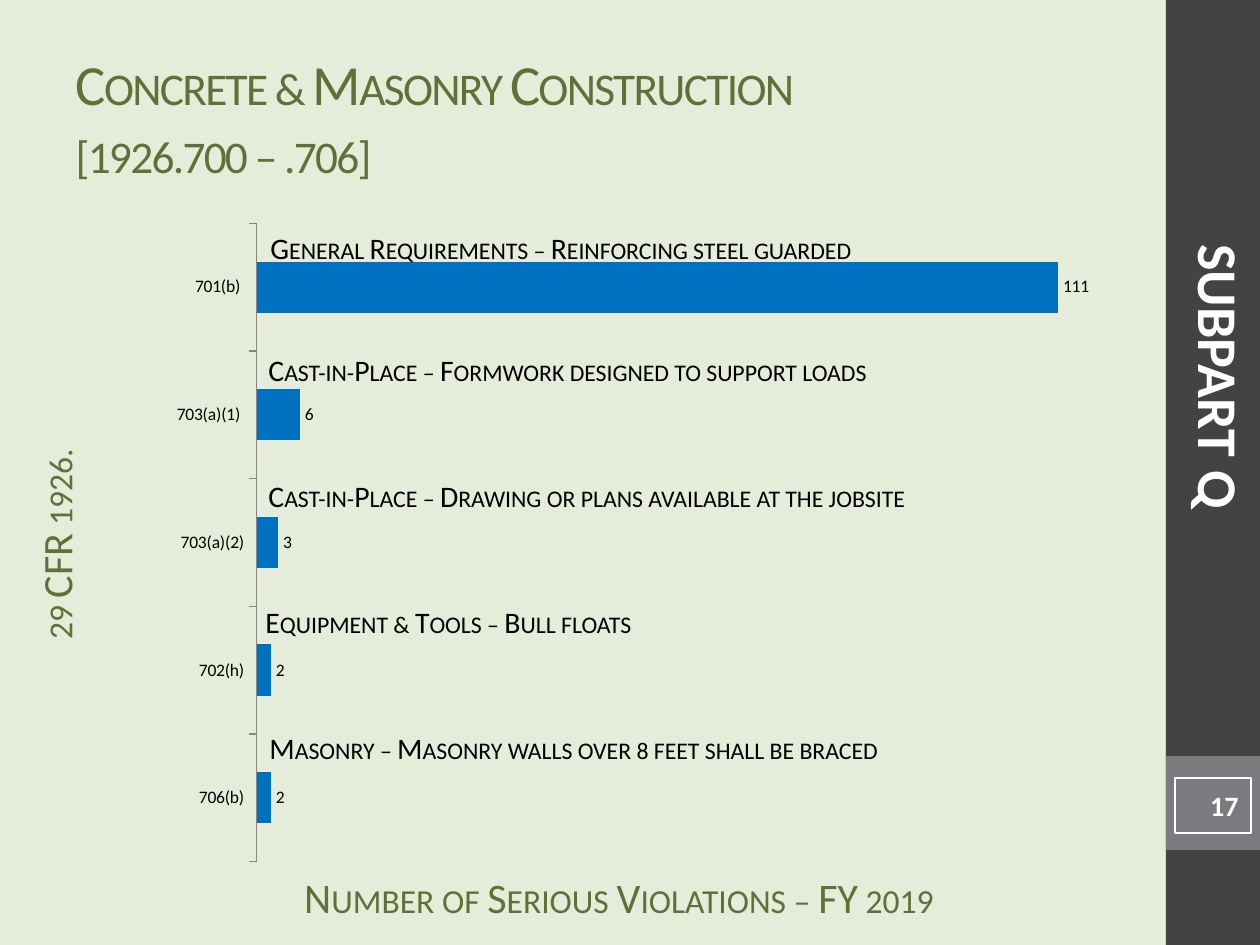
from pptx import Presentation
from pptx.chart.data import CategoryChartData
from pptx.dml.color import RGBColor
from pptx.enum.chart import XL_CHART_TYPE, XL_LABEL_POSITION, XL_TICK_MARK
from pptx.enum.shapes import MSO_SHAPE
from pptx.enum.text import MSO_ANCHOR, MSO_AUTO_SIZE, PP_ALIGN
from pptx.oxml import parse_xml
from pptx.oxml.ns import nsdecls, qn
from pptx.util import Emu, Pt

FACE = "Calibri"
GREEN, BLACK, WHITE, BLUE = "5D7238", "000000", "FFFFFF", "0070C0"

# Bars from bottom to top
BARS = [("706(b)", 2), ("702(h)", 2), ("703(a)(2)", 3),
        ("703(a)(1) ", 6), ("701(b) ", 111)]

# Captions above the bars: left, top, width, text
NOTES = [
    (258, 224, 624, "General Requirements – Reinforcing steel guarded"),
    (256, 346, 648, "Cast-in-Place – Formwork designed to support loads"),
    (256, 472, 689, "Cast-in-Place – Drawing or plans available at the jobsite"),
    (253, 598, 408, "Equipment & Tools – Bull floats"),
    (257, 724, 709, "Masonry – Masonry walls over 8 feet shall be braced"),
]


def px(num):
    return Emu(round(num * 914400 / 126))


def area(box):
    return [px(num) for num in box]


def color(code):
    return RGBColor.from_string(code)


def style(font, size, code, bold=False):
    font.name = FACE
    font.size = Pt(size)
    font.bold = bold
    font.color.rgb = color(code)


def write(frame, text, size, code, align=PP_ALIGN.LEFT, bold=False, small=False):
    frame.word_wrap = True
    par = frame.paragraphs[0]
    par.text = text
    par.alignment = align
    style(par.font, size, code, bold)
    if small:
        par._p.pPr.find(qn("a:defRPr")).set("cap", "small")
    return par


def label(slide, box, text, size, code, turn=0, top=6, **look):
    shape = slide.shapes.add_textbox(*area(box))
    shape.rotation = turn
    shape.text_frame.margin_top = px(top)
    write(shape.text_frame, text, size, code, **look)


def block(slide, box, fill=None, line=None):
    shape = slide.shapes.add_shape(MSO_SHAPE.RECTANGLE, *area(box))
    shape.shadow.inherit = False
    if fill:
        shape.fill.solid()
        shape.fill.fore_color.rgb = color(fill)
    else:
        shape.fill.background()
    if line:
        shape.line.color.rgb = color(line)
        shape.line.width = Pt(1.5)
    else:
        shape.line.fill.background()
    return shape


def head(slide, box, text):
    title = slide.shapes.title
    title.left, title.top, title.width, title.height = area(box)
    frame = title.text_frame
    frame.auto_size = MSO_AUTO_SIZE.NONE
    frame.vertical_anchor = MSO_ANCHOR.MIDDLE
    par = write(frame, text, 32.4, GREEN, small=True)
    par._p.pPr.find(qn("a:defRPr")).set("spc", "-100")


def place(chart, x, y, w, h):
    """Fix the inner plot area, as shares of the chart's frame."""
    plot = chart._chartSpace.chart.plotArea
    old = plot.find(qn("c:layout"))
    if old is not None:
        plot.remove(old)
    parts = "".join(f'<c:{key} val="{val}"/>' for key, val in
                    zip(("x", "y", "w", "h"), (x, y, w, h)))
    plot.insert(0, parse_xml(
        f'<c:layout {nsdecls("c")}><c:manualLayout><c:layoutTarget val="inner"/>'
        f'<c:xMode val="edge"/><c:yMode val="edge"/>{parts}'
        '</c:manualLayout></c:layout>'))


def graph(slide, box):
    data = CategoryChartData()
    data.categories = [name for name, _ in BARS]
    data.add_series("Series 1", [num for _, num in BARS])
    chart = slide.shapes.add_chart(
        XL_CHART_TYPE.BAR_CLUSTERED, *area(box), data).chart
    chart.has_legend = False
    chart.has_title = False
    style(chart.font, 10, BLACK)
    place(chart, 0.10, 0.02, 0.88, 0.96)

    # Axes
    side = chart.category_axis
    side.major_tick_mark = XL_TICK_MARK.OUTSIDE
    side.has_major_gridlines = False
    side.format.line.color.rgb = color("868686")
    base = chart.value_axis
    base.has_major_gridlines = False
    base.minimum_scale, base.maximum_scale = 0, 120
    base.visible = False

    # Bars and their values
    plot = chart.plots[0]
    plot.gap_width = 150
    plot.vary_by_categories = False
    fill = plot.series[0].format.fill
    fill.solid()
    fill.fore_color.rgb = color(BLUE)
    plot.has_data_labels = True
    tags = plot.data_labels
    tags.show_value = True
    tags.position = XL_LABEL_POSITION.OUTSIDE_END
    style(tags.font, 10, BLACK)


def main():
    deck = Presentation()
    deck.slide_width, deck.slide_height = px(1260), px(945)
    slide = deck.slides.add_slide(deck.slide_layouts[5])
    slide.background.fill.solid()
    slide.background.fill.fore_color.rgb = color("E5ECD9")
    mid = PP_ALIGN.CENTER

    # Side band
    block(slide, (1166, 0, 94, 945), "434342")
    block(slide, (1166, 756, 94, 94), "797B7E")

    # Title and chart with its axis names
    head(slide, (63, 38, 1050, 157),
         "Concrete & Masonry Construction\v[1926.700 – .706]")
    label(slide, (262, 872, 714, 42), "Number of Serious Violations – FY 2019",
          24, GREEN, top=0, align=mid, small=True)
    label(slide, (-197, 508, 528, 73), "29 CFR 1926.",
          24, GREEN, turn=270, top=0, align=mid, small=True)
    graph(slide, (158, 210, 985, 665))

    # Captions
    for left, top, width, text in NOTES:
        label(slide, (left, top, width, 49), text, 17, BLACK, small=True)

    # Page number and part name
    page = block(slide, (1175, 778, 76, 55), line=WHITE)
    page.text_frame.vertical_anchor = MSO_ANCHOR.MIDDLE
    write(page.text_frame, "17", 16, WHITE, PP_ALIGN.RIGHT, bold=True)
    label(slide, (843, 336, 753, 81), "SUBPART Q", 32, WHITE,
          turn=90, align=mid, bold=True)

    deck.save("out.pptx")


if __name__ == "__main__":
    main()
